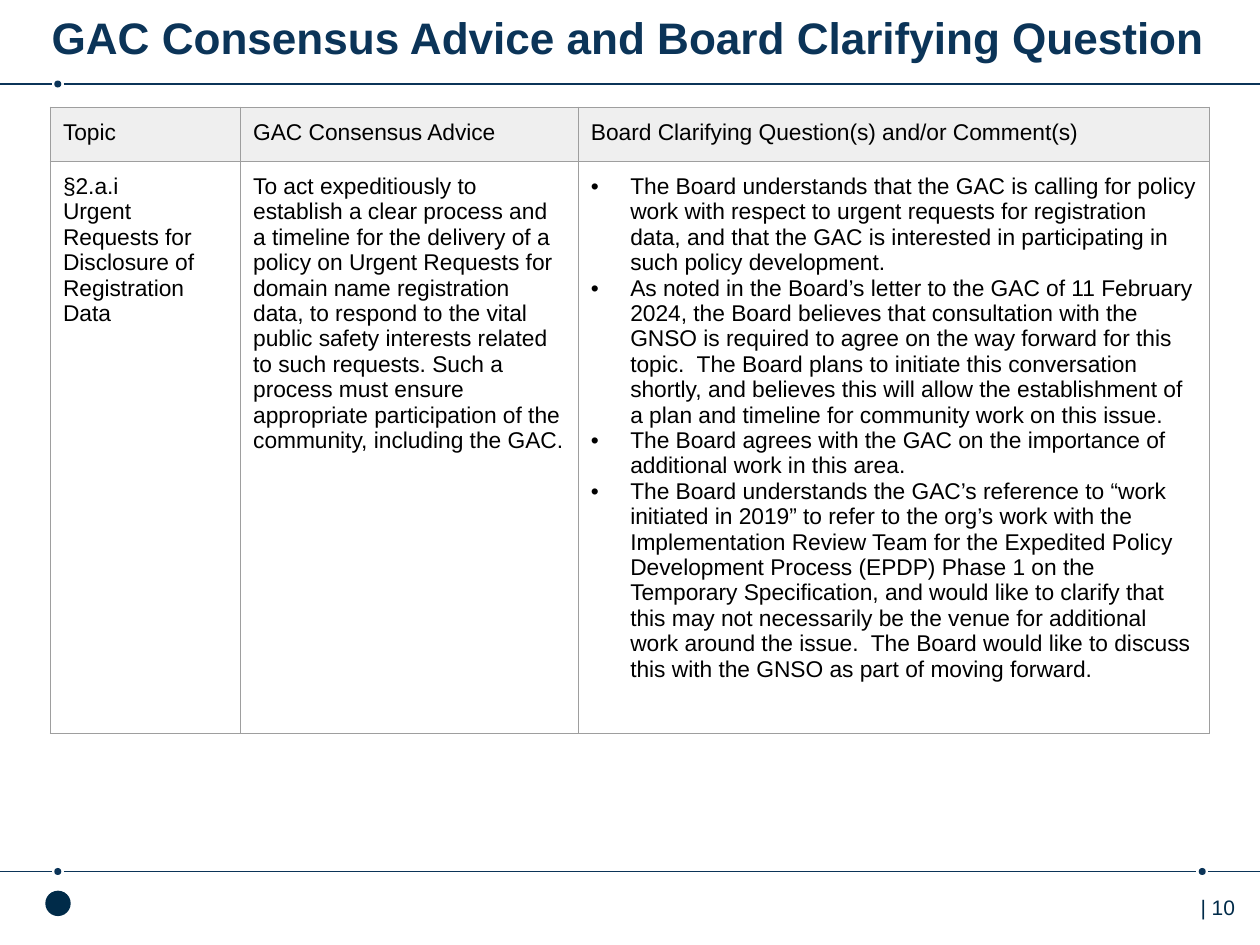
"""Builds a slide with a table of committee advice and board clarifying questions."""
from lxml import etree
from pptx import Presentation
from pptx.dml.color import RGBColor
from pptx.enum.shapes import MSO_CONNECTOR, MSO_SHAPE
from pptx.enum.text import MSO_ANCHOR, PP_ALIGN
from pptx.oxml import parse_xml
from pptx.oxml.ns import nsdecls, qn
from pptx.util import Pt

STRAIGHT = MSO_CONNECTOR.STRAIGHT
OVAL = MSO_SHAPE.OVAL
MIDDLE = MSO_ANCHOR.MIDDLE
LEFT = PP_ALIGN.LEFT

NAVY = RGBColor(0x0B, 0x34, 0x58)
DARK = RGBColor(0x00, 0x2B, 0x49)
BLACK = RGBColor(0, 0, 0)
HEADER_GRAY = RGBColor(0xEF, 0xEF, 0xEF)
BORDER_GRAY = RGBColor(0x9E, 0x9E, 0x9E)

HEADERS = ["Topic", "GAC Consensus Advice", "Board Clarifying Question(s) and/or Comment(s)"]
TOPIC = ["§2.a.i", "Urgent Requests for Disclosure of Registration Data"]
ADVICE = [
    "To act expeditiously to establish a clear process and a timeline for the delivery of a "
    "policy on Urgent Requests for domain name registration data, to respond to the vital "
    "public safety interests related to such requests. Such a process must ensure "
    "appropriate participation of the community, including the GAC."
]
COMMENTS = [
    "The Board understands that the GAC is calling for policy work with respect to urgent "
    "requests for registration data, and that the GAC is interested in participating in such "
    "policy development.",
    "As noted in the Board’s letter to the GAC of 11 February 2024, the Board believes that "
    "consultation with the GNSO is required to agree on the way forward for this topic.  The "
    "Board plans to initiate this conversation shortly, and believes this will allow the "
    "establishment of a plan and timeline for community work on this issue.",
    "The Board agrees with the GAC on the importance of additional work in this area.",
    "The Board understands the GAC’s reference to “work initiated in 2019” to refer to the "
    "org’s work with the Implementation Review Team for the Expedited Policy Development "
    "Process (EPDP) Phase 1 on the Temporary Specification, and would like to clarify that "
    "this may not necessarily be the venue for additional work around the issue.  The Board "
    "would like to discuss this with the GNSO as part of moving forward.",
]


def style_text(para, size, color, bold=False):
    for span in para.runs:
        span.font.name = "Arial"
        span.font.size = Pt(size)
        span.font.bold = bold
        span.font.color.rgb = color


def add_oval(page, left, top, width, height, color):
    oval = page.shapes.add_shape(OVAL, Pt(left), Pt(top), Pt(width), Pt(height))
    oval.shadow.inherit = False
    oval.fill.solid()
    oval.fill.fore_color.rgb = color
    oval.line.fill.background()


deck = Presentation()
deck.slide_width, deck.slide_height = Pt(720), Pt(540)
page = deck.slides.add_slide(deck.slide_layouts[5])

for y, dots in ((48, [33]), (498, [33, 687])):
    start = 0
    for x in dots + [None]:
        end = 720 if x is None else x - 3.5
        rule = page.shapes.add_connector(STRAIGHT, Pt(start), Pt(y), Pt(end), Pt(y))
        rule.line.color.rgb = NAVY
        rule.line.width = Pt(1)
        etree.SubElement(rule._element.spPr, qn("a:effectLst"))
        if x is not None:
            add_oval(page, x - 2, y - 2, 4, 4, NAVY)
            start = x + 3.5

add_oval(page, 25.9, 509, 14.5, 14.5, DARK)

title = page.shapes.title
title.left, title.top, title.width, title.height = Pt(29.5), Pt(3.6), Pt(690.5), Pt(35.3)
title_frame = title.text_frame
title_frame.text = "GAC Consensus Advice and Board Clarifying Question"
title_frame.margin_left = title_frame.margin_right = 0
title_frame.vertical_anchor = MIDDLE
title_frame.paragraphs[0].alignment = LEFT
style_text(title_frame.paragraphs[0], 25.2, NAVY, bold=True)

number_box = page.shapes.add_textbox(Pt(669), Pt(507.6), Pt(51), Pt(28.8))
number_frame = number_box.text_frame
number_frame.word_wrap = True
number_frame.margin_left = Pt(17)
number_frame.text = "| 10"
style_text(number_frame.paragraphs[0], 12, DARK)

columns = [108.7, 193, 360.7]
rows = [31, 319]
table = page.shapes.add_table(
    len(rows), len(columns), Pt(28.8), Pt(61.2), Pt(sum(columns)), Pt(sum(rows))
).table
table.first_row = table.horz_banding = False
for column, width in zip(table.columns, columns):
    column.width = Pt(width)
for row, height in zip(table.rows, rows):
    row.height = Pt(height)

contents = [[[header] for header in HEADERS], [TOPIC, ADVICE, COMMENTS]]
for row_index, row_contents in enumerate(contents):
    for column_index, texts in enumerate(row_contents):
        cell = table.cell(row_index, column_index)
        cell.margin_left = cell.margin_right = cell.margin_top = cell.margin_bottom = Pt(7.2)
        cell.text = "\n".join(texts)
        for para in cell.text_frame.paragraphs:
            style_text(para, 13, BLACK)
            if texts is COMMENTS:
                properties = para._p.get_or_add_pPr()
                properties.set("marL", str(Pt(22.5)))
                properties.set("indent", str(-Pt(22.5)))
                color = etree.SubElement(properties, qn("a:buClr"))
                etree.SubElement(color, qn("a:srgbClr"), val=str(BLACK))
                etree.SubElement(properties, qn("a:buFont"), typeface="Arial")
                etree.SubElement(properties, qn("a:buChar"), char="•")
        for side in "LRTB":
            cell._tc.get_or_add_tcPr().append(parse_xml(
                f'<a:ln{side} {nsdecls("a")} w="{Pt(0.75)}"><a:solidFill>'
                f'<a:srgbClr val="{BORDER_GRAY}"/></a:solidFill></a:ln{side}>'
            ))
        if row_index == 0:
            cell.fill.solid()
            cell.fill.fore_color.rgb = HEADER_GRAY
        else:
            cell.fill.background()

deck.save("out.pptx")
